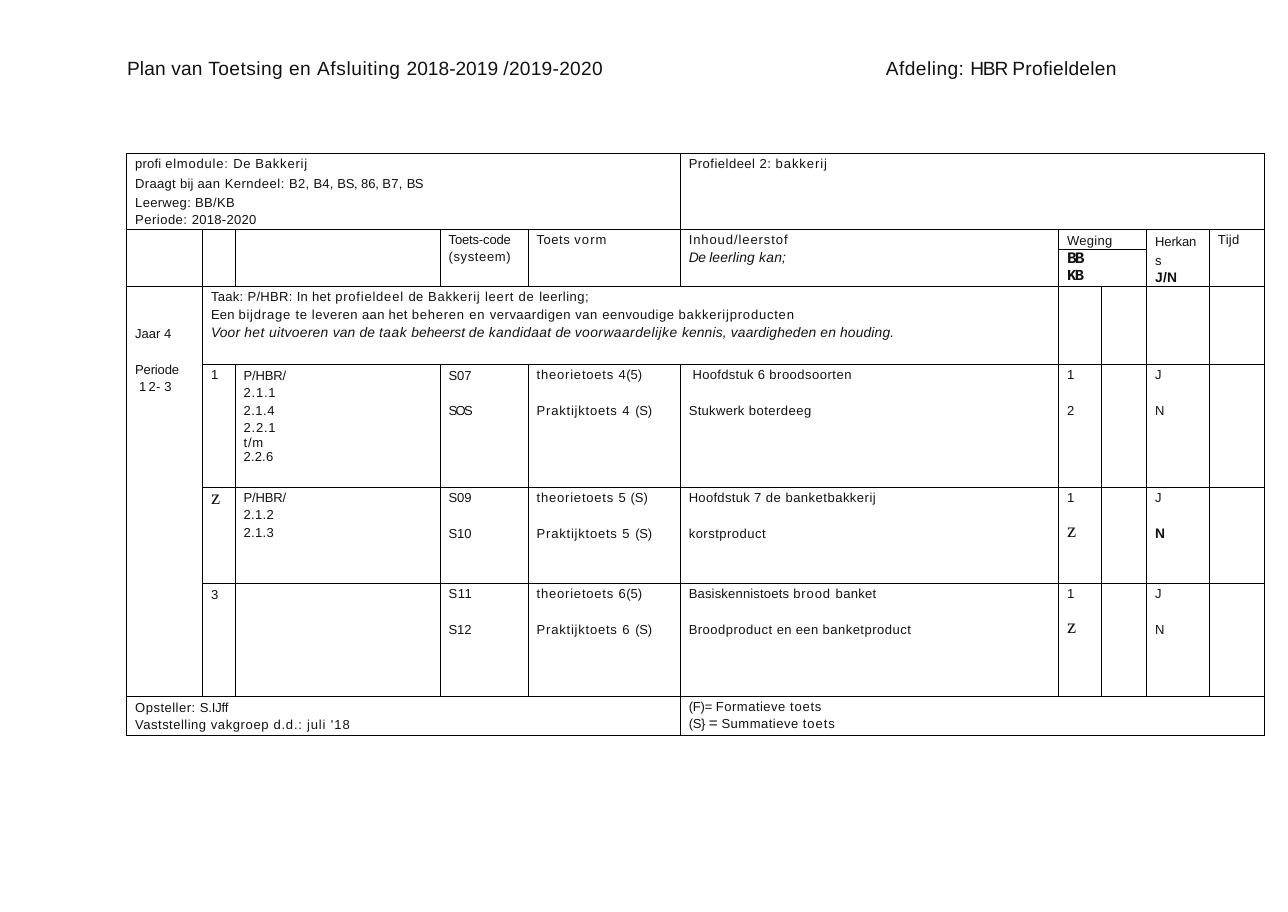
"""Build the slide with the bakery test plan table."""
import pptx
import pptx.dml.color
import pptx.enum.text
import pptx.oxml
import pptx.util
from lxml import etree
from pptx.oxml.ns import qn

Pt = pptx.util.Pt
COLORS = {"ink": "131113", "rule": "000000", "grey": "343634"}
STYLES = {
    "base": (8.5, "Arial", False, False, "ink"),
    "grey": (8.5, "Arial", False, False, "grey"),
    "slant": (9, "Arial", False, True, "ink"),
    "bold": (9, "Arial", True, False, "ink"),
    "code": (10.5, "Courier New", True, False, "ink"),
    "small": (10, "Courier New", True, False, "ink"),
    "serif": (13.5, "Times New Roman", False, False, "ink"),
    "sign": (10, "Arial", False, False, "ink"),
    "head": (12.5, "Arial", False, False, "ink"),
}
COLS = [49.5, 21.3, 133.9, 57.5, 99.3, 247, 28.1, 29.5, 41, 36]
ROWS = [49.7, 13, 24.5, 50.8, 80.2, 62.6, 74.2, 25.2]
SPANS = [(0, 0, 0, 4), (0, 5, 0, 9), (1, 6, 1, 7), (2, 6, 2, 7), (3, 0, 6, 0),
         (3, 1, 3, 5), (7, 0, 7, 4), (7, 5, 7, 9)]
SPANS += [(1, col, 2, col) for col in (0, 1, 2, 3, 4, 5, 8, 9)]
GAP = 13.8


def line(*runs, left=5.5, before=2, pitch=None):
    return runs, left, before, pitch


def word(text, track=0, style="base", **form):
    return line((text, track, style), **form)


def pair(first, last, gap=GAP):
    return [line(*first), line(*last, before=gap)]


def fill(frame, lines):
    for index, (runs, left, before, pitch) in enumerate(lines):
        par = frame.paragraphs[0] if index == 0 else frame.add_paragraph()
        par.alignment = pptx.enum.text.PP_ALIGN.LEFT
        par.space_before = Pt(before)
        if pitch:
            par.line_spacing = pitch
        props = par._p.get_or_add_pPr()
        props.set("marL", str(Pt(left)))
        props.set("indent", "0")
        for text, track, style in runs:
            run = par.add_run()
            run.text = text
            size, face, bold, slant, color = STYLES[style]
            run.font.size = Pt(size)
            run.font.name = face
            run.font.bold = bold
            run.font.italic = slant
            run.font.color.rgb = pptx.dml.color.RGBColor.from_string(COLORS[color])
            run._r.get_or_add_rPr().set("spc", str(round(track * 100)))


def frame(shape, lines):
    box = shape.text_frame
    box.word_wrap = True
    box.auto_size = pptx.enum.text.MSO_AUTO_SIZE.NONE
    box.vertical_anchor = pptx.enum.text.MSO_ANCHOR.TOP
    box.margin_left = box.margin_right = box.margin_bottom = 0
    box.margin_top = Pt(0.7)
    fill(box, lines)


def rule(cell):
    props = cell._tc.get_or_add_tcPr()
    for side in ("lnL", "lnR", "lnT", "lnB"):
        edge = etree.SubElement(props, qn("a:" + side), w=str(Pt(0.75)))
        paint = etree.SubElement(edge, qn("a:solidFill"))
        etree.SubElement(paint, qn("a:srgbClr"), val=COLORS["rule"])
    cell.fill.background()


def grid(slide):
    shape = slide.shapes.add_table(len(ROWS), len(COLS), Pt(82.8), Pt(100.1),
                                   Pt(sum(COLS)), Pt(sum(ROWS)))
    table = shape.table
    table.first_row = table.horz_banding = False
    for col, width in zip(table.columns, COLS):
        col.width = Pt(width)
    for row, height in zip(table.rows, ROWS):
        row.height = Pt(height)
        for cell in row.cells:
            cell.margin_left = cell.margin_right = cell.margin_bottom = 0
            cell.margin_top = Pt(2.2)
            rule(cell)
            etree.SubElement(cell.text_frame.paragraphs[0]._p, qn("a:endParaRPr"), sz="850")
    for top, left, low, right in SPANS:
        table.cell(top, left).merge(table.cell(low, right))
    return table


def put(table, row, col, lines, top=2.2):
    cell = table.cell(row, col)
    cell.margin_top = Pt(top)
    fill(cell.text_frame, lines)


def heads(table):
    put(table, 0, 0, [
        line(("profi ", 0.1, "base"), ("elmodule", 0.5, "base"), (": ", 0.5, "grey"),
             ("De ", 0.4, "base"), ("Bakkerij", 0.5, "base")),
        line(("Draagt ", 0.2, "base"), ("bij ", 0.1, "base"), ("aan Kerndeel: ", 0.3, "base"),
             ("B2, ", 0.2, "base"), ("B4, ", 0.1, "base"), ("BS, ", -0.2, "base"),
             ("86, ", -0.1, "base"), ("B7, ", 0.2, "base"), ("BS", -0.4, "base"),
             before=0.6, pitch=Pt(12.5)),
        word("Leerweg: BB/KB", 0.2, before=0, pitch=Pt(12.5)),
        line(("Periode: ", 0.3, "base"), ("2018-2020", 0.2, "base"), before=1.1, pitch=Pt(9.7))])
    put(table, 0, 5, [line(("Profieldeel 2: ", 0.3, "base"), ("bakkerij", 0.6, "base"))])
    put(table, 1, 3, [word("Toets-code", -0.1, before=0, pitch=1.2),
                      word("(systeem)", 0.4, before=0, pitch=1.2)], 0)
    put(table, 1, 4, [line(("Toets ", 0.3, "base"), ("vorm", 0.7, "base"))])
    put(table, 1, 5, [word("Inhoud/leerstof", 0.6),
                      line(("De ", -0.3, "slant"), ("leerling ", 0.1, "slant"),
                           ("kan;", 0.2, "slant"), before=1.6)])
    put(table, 1, 6, [word("Weging", 0.2, before=1.8, pitch=Pt(9.9))])
    put(table, 2, 6, [word("BB", -1.2, "code", before=0, pitch=Pt(12.4)),
                      word("KB", -0.9, "small", before=0.1, pitch=Pt(11.2))], 0)
    put(table, 1, 8, [word("Herkan", -0.1, before=0.3, pitch=Pt(12.5)),
                      word("s", 0.3, before=0, pitch=Pt(12.5)),
                      word("J/N", 0.1, "bold", before=1, pitch=Pt(10.2))], 0.4)
    put(table, 1, 9, [word("Tijd", 0.2, before=1.8)])


def task(table):
    put(table, 3, 0, [word("Jaar 4", before=0),
                      word("Periode", -0.1, before=12, pitch=1.2),
                      line(("1 ", -0.8, "base"), ("2- ", 0.1, "base"), ("3", 0.2, "base"),
                           left=8, before=0, pitch=1.2)], 26)
    put(table, 3, 1, [
        line(("Taak: P/HBR: In het ", 0.2, "base"), ("profieldeel ", 0.5, "base"),
             ("de ", 0.3, "base"), ("Bakkerij leert de ", 0.5, "base"), ("leerling;", 0.3, "base")),
        line(("Een ", 0.1, "base"), ("bijdrage ", 0.5, "base"), ("te ", 0.4, "base"),
             ("leveren ", 0.3, "base"), ("aan het ", 0.2, "base"), ("beheren en ", 0.5, "base"),
             ("vervaardigen ", 0.3, "base"), ("van ", 0.4, "base"), ("eenvoudige ", 0.3, "base"),
             ("bakkerijproducten", 0.5, "base")),
        line(("Voor ", 0.1, "slant"), ("het ", 0.3, "slant"), ("uitvoeren ", 0.2, "slant"),
             ("van de ", 0.1, "slant"), ("taak ", 0.3, "slant"), ("beheerst ", 0, "slant"),
             ("de kandidaat ", 0.2, "slant"), ("de ", 0, "slant"),
             ("voorwaardelijke ", 0.3, "slant"),
             ("kennis, vaardigheden en houding.", 0.1, "slant"), before=1.6)])


def tests(table):
    parts = [[word("P/HBR/", -0.1, before=0.8, pitch=1.18),
              word("2.1.1", 0.5, before=0, pitch=1.18), word("2.1.4", 0.3),
              word("2.2.1", 0.5), word("t/m", 0.5, before=0), word("2.2.6", 0.1, before=0)],
             [word("P/HBR/", -0.1, before=1.2, pitch=1.16),
              word("2.1.2", 0.2, before=0, pitch=1.16), word("2.1.3", 0.2)]]
    for row, lines in enumerate(parts, 4):
        put(table, row, 2, lines, 1)
    put(table, 4, 1, [word("1")])
    put(table, 5, 1, [word("z", 0, "serif", before=0, pitch=Pt(13.8))], 0)
    put(table, 6, 1, [word("3")], 2.9)
    codes = [(("S07", -0.1), ("SOS", -1.1)), (("S09", -0.1), ("S10", -0.1)),
             (("S11", 0.3), ("S12", -0.1))]
    forms = [("4", "(5)"), ("5 ", "(S)"), ("6", "(5)")]
    goals = [([("Hoofdstuk 6 ", 0.2, "base"), ("broodsoorten", 0.3, "base")],
              [("Stukwerk ", 0.2, "base"), ("boterdeeg", 0.3, "base")]),
             ([("Hoofdstuk ", 0.2, "base"), ("7 de banketbakkerij", 0.3, "base")],
              [("korstproduct", 0.3, "base")]),
             ([("Basiskennistoets ", 0.1, "base"), ("brood ", 0.6, "base"),
               ("banket", 0.2, "base")],
              [("Broodproduct ", 0.3, "base"), ("en een ", 0.2, "base"),
               ("banketproduct", 0.3, "base")])]
    loads = [("2", "base", GAP), ("z", "serif", 9), ("z", "serif", 9)]
    marks = ["base", "bold", "base"]
    for index, (code, form, goal, load, mark) in enumerate(zip(codes, forms, goals, loads, marks)):
        row = 4 + index
        put(table, row, 3, pair([(*code[0], "base")], [(*code[1], "base")]), 2.5)
        put(table, row, 4, pair(
            [("theorietoets ", 0.5, "base"), (form[0], 0.3, "base"), (form[1], 0, "base")],
            [("Praktijktoets ", 0.5, "base"), (f"{row} ", 0.7, "base"), ("(S)", -0.2, "base")]))
        put(table, row, 5, pair(*goal))
        if index == 0:
            table.cell(row, 5).text_frame.paragraphs[0]._p.pPr.set("marL", str(Pt(8)))
        put(table, row, 6, pair([("1", 0, "base")], [(load[0], 0, load[1])], load[2]))
        put(table, row, 8, pair([("J", 0, "base")], [("N", 0, mark)]))


def notes(table):
    put(table, 7, 0, [line(("Opsteller: ", 0.3, "base"), ("S.IJff", -0.1, "base")),
                      line(("Vaststelling ", 0.3, "base"), ("vakgroep ", 0.4, "base"),
                           ("d.d.: juli ", 0.5, "base"), ("'18", 0.7, "base"),
                           before=1.8, pitch=Pt(9.4))], 2.6)
    put(table, 7, 5, [line(("(F)= ", -0.1, "base"), ("Formatieve ", 0.3, "base"),
                           ("toets", 0.5, "base"), before=1.5, pitch=1.05),
                      line(("(S} ", -0.2, "base"), ("= ", -0.3, "sign"),
                           ("Summatieve ", 0.3, "base"), ("toets", 0.6, "base"),
                           before=0, pitch=1.05)], 1.4)


def main():
    deck = pptx.Presentation()
    deck.slide_width, deck.slide_height = Pt(841), Pt(595.5)
    slide = deck.slides.add_slide(deck.slide_layouts[5])
    table = grid(slide)
    for part in (heads, task, tests, notes):
        part(table)
    title = slide.shapes.title
    title.left, title.top, title.width, title.height = Pt(82), Pt(36), Pt(315), Pt(17.3)
    frame(title, [line(("Plan van ", 0.1, "head"), ("Toetsing en ", 0.3, "head"),
                       ("Afsluiting ", 0.4, "head"), ("2018-2019 ", 0, "head"),
                       ("/2019-2020", 0.2, "head"), left=1, before=1)])
    side = slide.shapes.add_textbox(Pt(577.5), Pt(36), Pt(154), Pt(17.3))
    frame(side, [line(("Afdeling: ", 0.3, "head"), ("HBR ", -0.8, "head"),
                      ("Profieldelen", 0.2, "head"), left=1, before=1)])
    deck.save("out.pptx")


if __name__ == "__main__":
    main()
